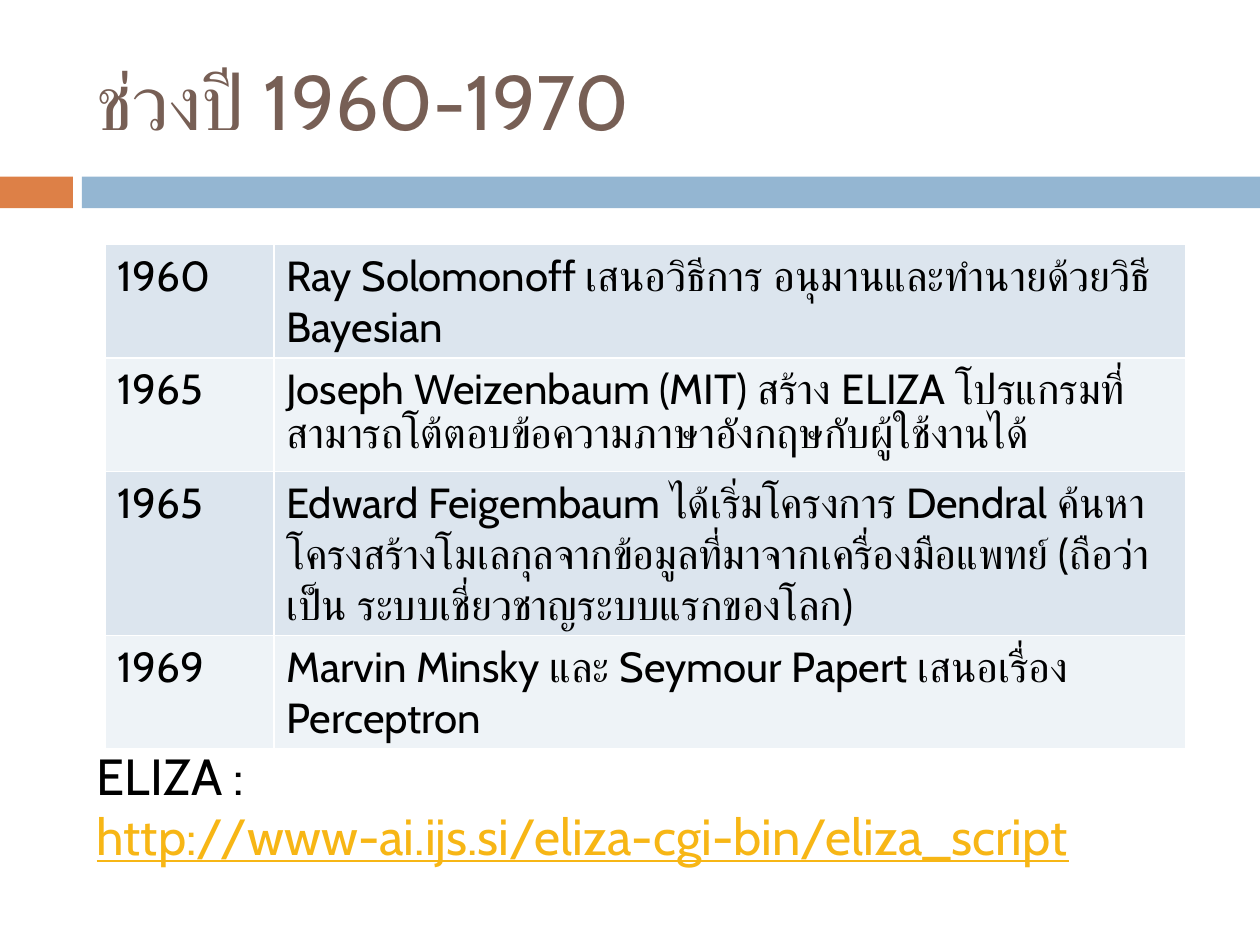
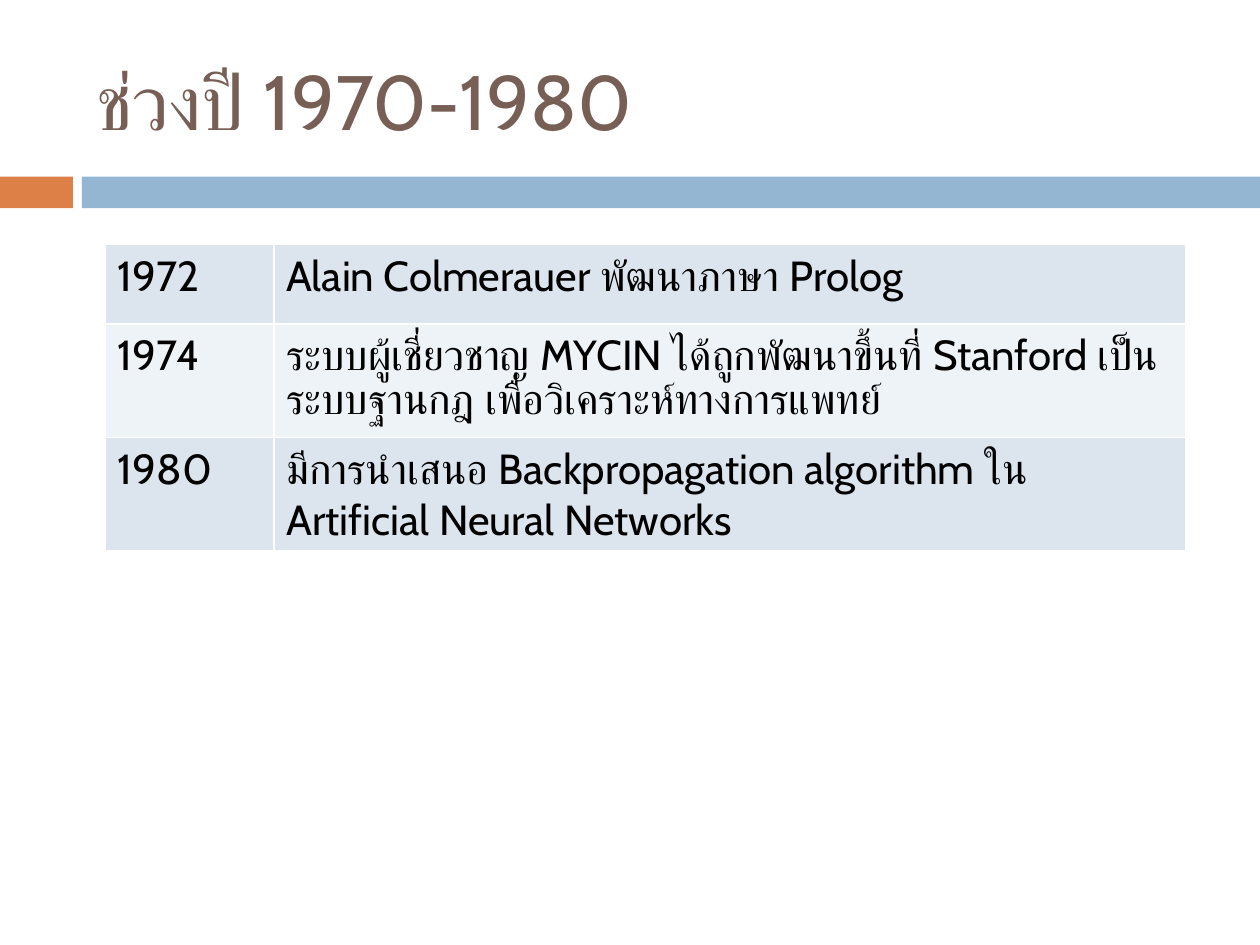
from lxml import etree
from pptx import Presentation
from pptx.dml.color import RGBColor
from pptx.enum.lang import MSO_LANGUAGE_ID
from pptx.enum.shapes import MSO_SHAPE
from pptx.enum.text import MSO_ANCHOR
from pptx.oxml.ns import qn
from pptx.util import Cm, Pt

RECT = MSO_SHAPE.RECTANGLE
TOP, MIDDLE = MSO_ANCHOR.TOP, MSO_ANCHOR.MIDDLE
THAI = MSO_LANGUAGE_ID.THAI

FONT = "Cabin"
BLACK, WHITE, BROWN, GOLD = "000000", "FFFFFF", "775F55", "F7B615"
ROW_FILLS = ("DCE5EE", "EEF3F7")
BANDS = [(0, 1.47, "DD8047"), (1.65, 23.75, "94B6D2")]
BAND_TOP, BAND_HEIGHT = 3.56, 0.64
TEXT_LEFT, TEXT_WIDTH = 1.7, 22.65
TABLE_LEFT, TABLE_TOP = 2.12, 4.93
COLUMN_WIDTHS = (3.4, 18.39)
ROW_HEIGHTS = (1.6, 2.26, 1.32, 1.32)

SLIDES = [
    {
        "title": "ช่วงปี 1960-1970",
        "events": [
            ("1960", "Ray Solomonoff เสนอวิธีการ อนุมานและทำนายด้วยวิธี Bayesian"),
            ("1965", "Joseph Weizenbaum (MIT) สร้าง ELIZA โปรแกรมที่สามารถโต้ตอบข้อความภาษาอังกฤษกับผู้ใช้งานได้"),
            ("1965", "Edward Feigembaum ได้เริ่มโครงการ Dendral ค้นหาโครงสร้างโมเลกุลจากข้อมูลที่มาจากเครื่องมือแพทย์ (ถือว่าเป็น ระบบเชี่ยวชาญระบบแรกของโลก)"),
            ("1969", "Marvin Minsky และ Seymour Papert เสนอเรื่อง Perceptron"),
        ],
        "reference": ("ELIZA : ", "http://www-ai.ijs.si/eliza-cgi-bin/eliza_script"),
    },
    {
        "title": "ช่วงปี 1970-1980",
        "events": [
            ("1972", "Alain Colmerauer พัฒนาภาษา Prolog"),
            ("1974", "ระบบผู้เชี่ยวชาญ MYCIN ได้ถูกพัฒนาขึ้นที่ Stanford เป็นระบบฐานกฎ เพื่อวิเคราะห์ทางการแพทย์"),
            ("1980", "มีการนำเสนอ Backpropagation algorithm ใน Artificial Neural Networks"),
        ],
    },
]


def rgb(value):
    return RGBColor.from_string(value)


def style_run(r, size, color):
    r.font.name = FONT
    r.font.size = Pt(size)
    r.font.color.rgb = rgb(color)
    r.font.language_id = THAI


def add_bands(s):
    for left, width, color in BANDS:
        sp = s.shapes.add_shape(RECT, Cm(left), Cm(BAND_TOP), Cm(width), Cm(BAND_HEIGHT))
        sp.shadow.inherit = False
        sp.fill.solid()
        sp.fill.fore_color.rgb = rgb(color)
        sp.line.fill.background()


def add_text(s, top, height, runs, size, anchor=TOP, space_before=0):
    sp = s.shapes.add_textbox(Cm(TEXT_LEFT), Cm(top), Cm(TEXT_WIDTH), Cm(height))
    tf = sp.text_frame
    tf.word_wrap = True
    tf.vertical_anchor = anchor
    p = tf.paragraphs[0]
    p.space_before = Pt(space_before)
    for text, color, underline in runs:
        r = p.add_run()
        r.text = text
        style_run(r, size, color)
        r.font.underline = underline


def add_borders(cell):
    tc_pr = cell._tc.get_or_add_tcPr()
    for i, side in enumerate(("a:lnL", "a:lnR", "a:lnT", "a:lnB")):
        ln = etree.Element(qn(side), w=str(Pt(1)))
        fill = etree.SubElement(ln, qn("a:solidFill"))
        etree.SubElement(fill, qn("a:srgbClr"), val=WHITE)
        tc_pr.insert(i, ln)


def add_events(s, events):
    heights = ROW_HEIGHTS[:len(events)]
    table = s.shapes.add_table(
        len(events), len(COLUMN_WIDTHS), Cm(TABLE_LEFT), Cm(TABLE_TOP),
        Cm(sum(COLUMN_WIDTHS)), Cm(sum(heights))).table
    table.first_row = table.horz_banding = False
    for column, width in zip(table.columns, COLUMN_WIDTHS):
        column.width = Cm(width)
    for i, (event, height) in enumerate(zip(events, heights)):
        table.rows[i].height = Cm(height)
        for j, text in enumerate(event):
            cell = table.cell(i, j)
            cell.text_frame.text = text
            style_run(cell.text_frame.paragraphs[0].runs[0], 24, BLACK)
            cell.fill.solid()
            cell.fill.fore_color.rgb = rgb(ROW_FILLS[i % 2])
            add_borders(cell)


def main():
    prs = Presentation()
    prs.slide_width, prs.slide_height = Cm(25.4), Cm(19.05)
    for content in SLIDES:
        s = prs.slides.add_slide(prs.slide_layouts[6])
        add_bands(s)
        add_text(s, 0.64, 2.74, [(content["title"], BROWN, False)], 44, MIDDLE)
        if "reference" in content:
            label, address = content["reference"]
            runs = [(label, BLACK, False), (address, GOLD, True)]
            add_text(s, 14.88, 2.26, runs, 29, space_before=7)
        add_events(s, content["events"])
    prs.save("out.pptx")


if __name__ == "__main__":
    main()
